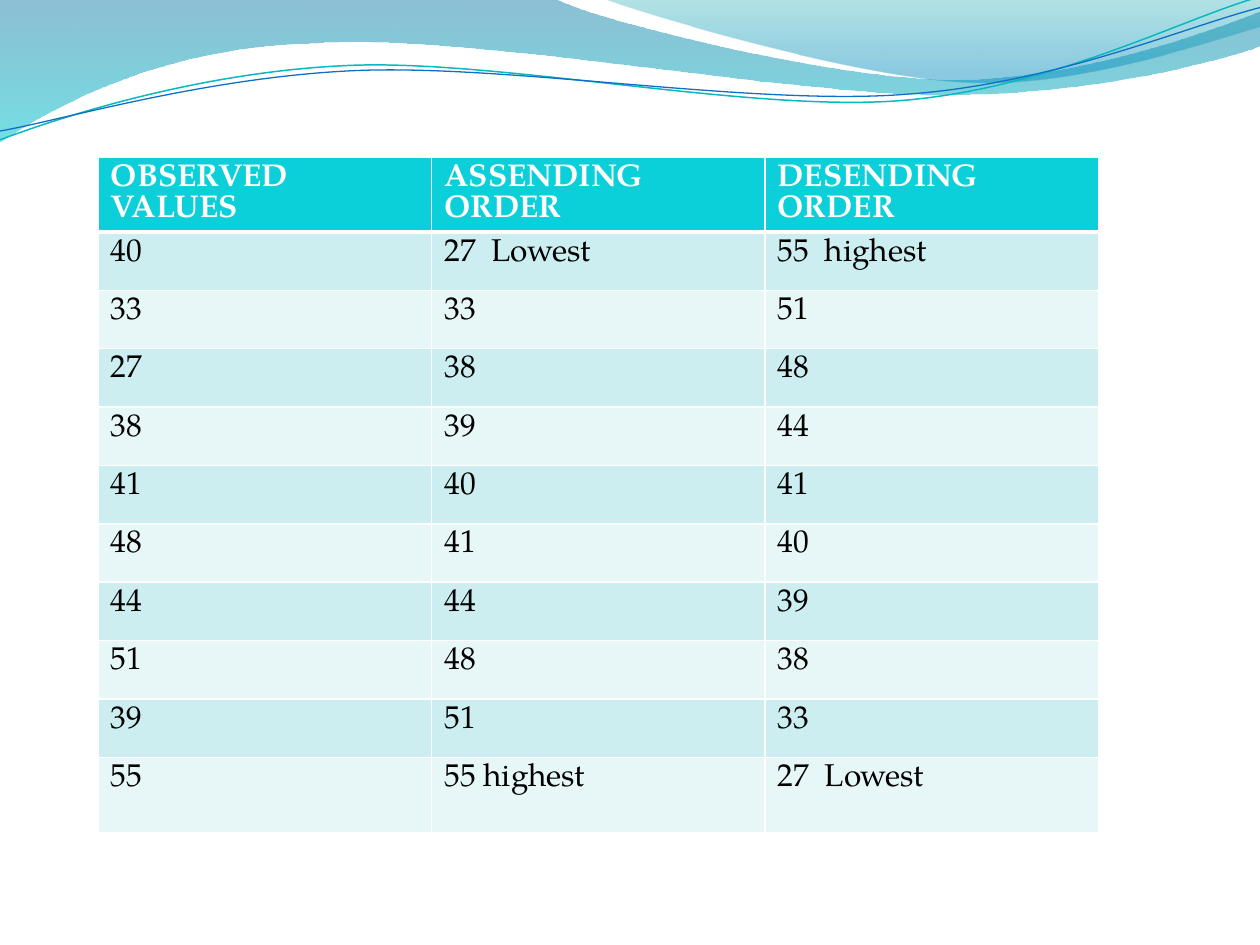
from math import cos, radians, sin

from lxml.etree import SubElement
from pptx import Presentation
from pptx.dml.color import RGBColor
from pptx.oxml.ns import qn
from pptx.util import Inches, Pt

COLORS = {
    "white": "FFFFFF", "black": "000000", "header": "0BD0D9",
    "odd row": "CCEEF1", "even row": "E7F7F8",
    "deep blue": "0074A1", "aqua": "00C6CF",
    "teal": "00A1A9", "sky": "008BBF",
    "teal line": "0AB8BF", "blue line": "0F6FC6",
}
FONT = "TeX Gyre Pagella"
WIDTH, HEIGHT = Inches(10), Inches(7.5)
BAND_COLUMNS = 10
LINE_TILT = -2.7

WIDE_WAVE = [
    [(0, 0)], [(4.4, -0.01)],
    [(4.76, 0.17), (6.64, 0.63), (7.58, 0.63)],
    [(8.53, 0.63), (9.58, 0.26), (10, 0.09)],
    [(10.01, 0.36)],
    [(9.83, 0.44), (8.7, 0.76), (7.46, 0.75)],
    [(6.22, 0.75), (3.82, 0.28), (2.57, 0.34)],
    [(1.29, 0.36), (0.46, 0.83), (-0.01, 1.13)],
    [(0, 0)],
]
RIGHT_WAVE = [
    [(4.79, -0.01)],
    [(5.09, 0.11), (6.82, 0.62), (7.69, 0.65)],
    [(8.56, 0.69), (9.61, 0.32), (10, 0.21)],
    [(10, 0)], [(4.79, -0.01)],
]
TEAL_LINE = [
    [(0, 1.11)],
    [(0.48, 0.93), (1.58, 0.57), (2.77, 0.52)],
    [(3.95, 0.47), (5.93, 0.89), (7.13, 0.8)],
    [(8.33, 0.71), (9.38, 0.15), (9.98, -0.02)],
]
BLUE_LINE = [
    [(0, 1.04)],
    [(0.47, 0.96), (1.64, 0.61), (2.83, 0.56)],
    [(4.03, 0.51), (5.97, 0.84), (7.17, 0.75)],
    [(8.36, 0.67), (9.41, 0.21), (10, 0.06)],
]
OBSERVED = [40, 33, 27, 38, 41, 48, 44, 51, 39, 55]


def rgb(name):
    return RGBColor.from_string(COLORS[name])


def point_in_frame(point, frame, tilt):
    left, top, width, height = frame
    angle = radians(-tilt)
    x = point[0] - left - width / 2
    y = point[1] - top - height / 2
    return (x * cos(angle) - y * sin(angle) + width / 2,
            x * sin(angle) + y * cos(angle) + height / 2)


def add_outline(slide, box, frame, segments, closed, tilt=0):
    left, top, width = box
    unit = width / BAND_COLUMNS
    curves = [[tuple(round(value * unit) for value in point_in_frame(point, frame, tilt))
               for point in segment] for segment in segments]
    ends = [curve[-1] for curve in curves]
    builder = slide.shapes.build_freeform(*ends[0], scale=1.0)
    builder.add_line_segments(ends[1:], close=closed)
    shape = builder.convert_to_shape()
    shape.left, shape.top = round(left + frame[0] * unit), round(top + frame[1] * unit)
    shape.width, shape.height = round(frame[2] * unit), round(frame[3] * unit)
    shape.rotation = tilt % 360
    shape.shadow.inherit = False
    draw_curves(shape, curves, closed)
    return shape


def draw_curves(shape, curves, closed):
    outline = next(shape._element.spPr.iter(qn("a:path")))
    outline.set("w", str(shape.width))
    outline.set("h", str(shape.height))
    for command in list(outline):
        outline.remove(command)
    for index, curve in enumerate(curves):
        tag = "a:moveTo" if index == 0 else "a:lnTo" if len(curve) == 1 else "a:cubicBezTo"
        command = SubElement(outline, qn(tag))
        for x, y in curve:
            SubElement(command, qn("a:pt"), x=str(x), y=str(y))
    if closed:
        SubElement(outline, qn("a:close"))


def add_wave(slide, box, frame, segments, stops):
    shape = add_outline(slide, box, frame, segments, True)
    shape.line.fill.background()
    shape.fill.gradient()
    shape.fill.gradient_angle = 270
    for stop, (position, color, _) in zip(shape.fill.gradient_stops, stops):
        stop.position = position
        stop.color.rgb = rgb(color)
    for element, (_, _, opacity) in zip(shape._element.spPr.iter(qn("a:srgbClr")), stops):
        SubElement(element, qn("a:alpha"), val=str(opacity * 1000))


def add_wave_line(slide, box, frame, segments, color, points):
    shape = add_outline(slide, box, frame, segments, False, LINE_TILT)
    shape.fill.background()
    shape.line.color.rgb = rgb(color)
    shape.line.width = Pt(points)


def add_wave_band(slide, box):
    add_wave(slide, box, (-0.01, -0.01, 10.02, 1.14), WIDE_WAVE,
             [(0, "deep blue", 45), (1, "aqua", 55)])
    add_wave(slide, box, (4.79, -0.01, 5.21, 0.7), RIGHT_WAVE,
             [(0, "teal", 30), (0.8, "sky", 45)])
    add_wave_line(slide, box, (-0.02, 0.22, 10.02, 0.71), TEAL_LINE, "teal line", 0.85)
    add_wave_line(slide, box, (-0.02, 0.3, 10.03, 0.58), BLUE_LINE, "blue line", 0.75)


def set_borders(cell, bottom_points):
    properties = cell._tc.get_or_add_tcPr()
    widths = {"a:lnL": 1, "a:lnR": 1, "a:lnT": 1, "a:lnB": bottom_points}
    for index, (side, points) in enumerate(widths.items()):
        line = SubElement(properties, qn(side), w=str(Pt(points)))
        fill = SubElement(line, qn("a:solidFill"))
        SubElement(fill, qn("a:srgbClr"), val=COLORS["white"])
        properties.insert(index, line)


def format_cell(cell, text, fill, is_header):
    cell.text_frame.text = text
    font = cell.text_frame.paragraphs[0].runs[0].font
    font.name, font.size, font.bold = FONT, Pt(18), is_header
    font.color.rgb = rgb("white" if is_header else "black")
    cell.fill.solid()
    cell.fill.fore_color.rgb = rgb(fill)
    set_borders(cell, 3 if is_header else 1)


def table_rows():
    ascending = [str(value) for value in sorted(OBSERVED)]
    descending = ascending[::-1]
    ascending[0] += "  Lowest"
    ascending[-1] += " highest"
    descending[0] += "  highest"
    descending[-1] += "  Lowest"
    header = ("OBSERVED  VALUES", "ASSENDING ORDER", "DESENDING ORDER")
    return [header, *zip(map(str, OBSERVED), ascending, descending)]


def add_order_table(slide, box):
    left, top, width, height = box
    rows = table_rows()
    table = slide.shapes.add_table(len(rows), len(rows[0]), left, top, width, height).table
    for column in table.columns:
        column.width = round(width / len(rows[0]))
    for row_index, texts in enumerate(rows):
        is_header = row_index == 0
        fill = "header" if is_header else "odd row" if row_index % 2 else "even row"
        for column_index, text in enumerate(texts):
            format_cell(table.cell(row_index, column_index), text, fill, is_header)
    table.rows[len(rows) - 1].height = round(height * 0.118)


def main():
    presentation = Presentation()
    presentation.slide_width, presentation.slide_height = WIDTH, HEIGHT
    slide = presentation.slides.add_slide(presentation.slide_layouts[6])
    add_wave_band(slide, (0, 0, WIDTH))
    add_order_table(slide, (Inches(0.78), Inches(1.25), Inches(7.94), Inches(5.1)))
    presentation.save("out.pptx")


if __name__ == "__main__":
    main()
